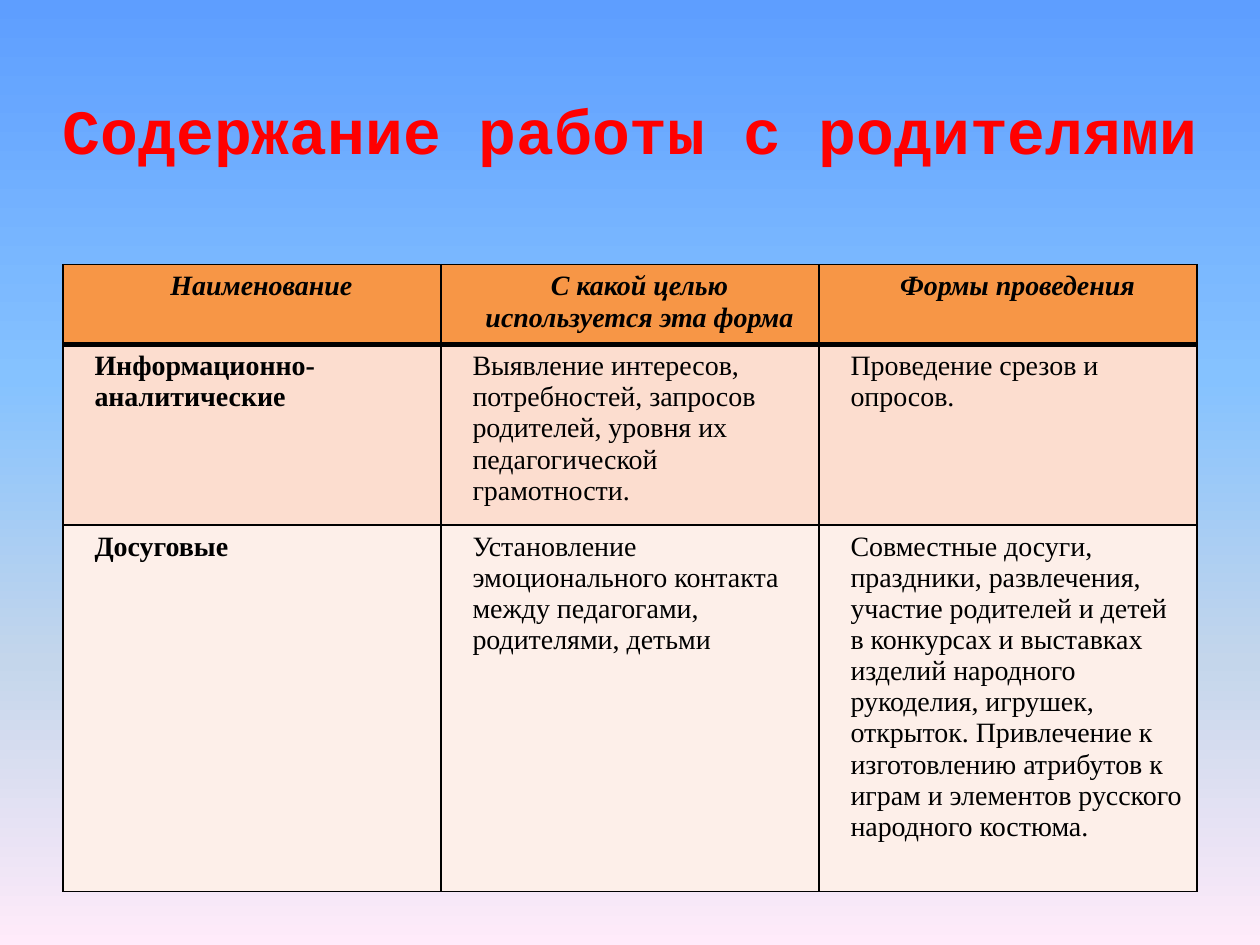
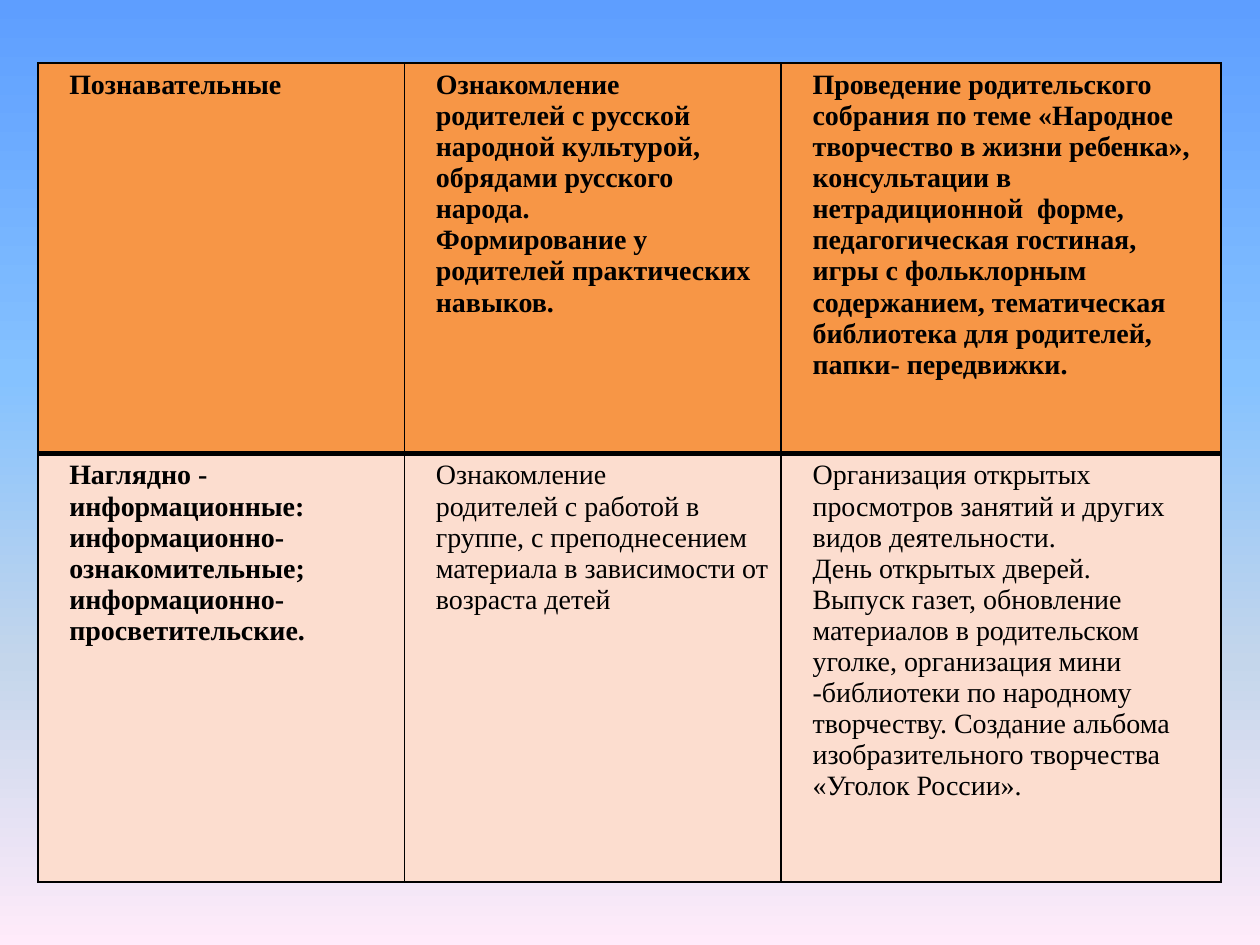
from copy import deepcopy
from dataclasses import dataclass

from lxml.etree import SubElement
from pptx import Presentation
from pptx.dml.color import RGBColor
from pptx.enum.text import PP_ALIGN
from pptx.oxml.ns import qn
from pptx.util import Inches, Pt


@dataclass(frozen=True)
class Theme:
    background: tuple = ((0, "5E9EFF"), (40, "85C2FF"), (70, "C4D6EB"), (100, "FFEBFA"))
    title_color: str = "FF0000"
    ink: str = "000000"
    row_fills: tuple = ("F79646", "FCDDCF", "FDEFE9")
    title_font: str = "Courier New"
    body_font: str = "Times New Roman"
    title_size: int = 36
    body_size: int = 16
    thin_line: int = 1
    header_line: int = 3
    cell_indent: float = 0.15


def write_text(text_frame, text, *, font, size, color, bold=False, italic=False,
               align=PP_ALIGN.LEFT, indent=0):
    text_frame.word_wrap = True
    paragraph = text_frame.paragraphs[0]
    paragraph.text = text
    paragraph.alignment = align
    if indent:
        properties = paragraph._p.get_or_add_pPr()
        properties.set("marL", str(Inches(indent)))
        properties.set("indent", "0")
    for run in paragraph.runs:
        run.font.name = font
        run.font.size = Pt(size)
        run.font.bold = bold
        run.font.italic = italic
        run.font.color.rgb = RGBColor.from_string(color)
    for line_break in paragraph._p.findall(qn("a:br")):
        line_break.insert(0, deepcopy(paragraph.runs[0]._r.rPr))


class Deck:
    def __init__(self, theme):
        self.theme = theme
        self.presentation = Presentation()
        self.presentation.slide_width = Inches(10)
        self.presentation.slide_height = Inches(7.5)
        self.slide = None

    def add_slide(self):
        self.slide = self.presentation.slides.add_slide(self.presentation.slide_layouts[6])
        fill = self.slide.background.fill
        fill.gradient()
        fill.gradient_angle = 270
        stops = next(self.slide._element.iter(qn("a:gsLst")))
        for stop in list(stops):
            stops.remove(stop)
        for position, color in self.theme.background:
            stop = SubElement(stops, qn("a:gs"), pos=str(position * 1000))
            SubElement(stop, qn("a:srgbClr"), val=color)

    def add_title(self, text, left, top, width, height):
        box = self.slide.shapes.add_textbox(Inches(left), Inches(top), Inches(width), Inches(height))
        write_text(box.text_frame, text, font=self.theme.title_font, size=self.theme.title_size,
                   color=self.theme.title_color, bold=True, align=PP_ALIGN.CENTER)

    def set_borders(self, cell, top, bottom):
        properties = cell._tc.get_or_add_tcPr()
        thin = self.theme.thin_line
        sides = (("a:lnL", thin), ("a:lnR", thin), ("a:lnT", top), ("a:lnB", bottom))
        for side, width in sides:
            line = SubElement(properties, qn(side), w=str(Pt(width)))
            fill = SubElement(line, qn("a:solidFill"))
            SubElement(fill, qn("a:srgbClr"), val=self.theme.ink)

    def add_table(self, left, top, column_widths, row_heights, rows, column_titles=False):
        theme = self.theme
        table = self.slide.shapes.add_table(
            len(rows), len(column_widths), Inches(left), Inches(top),
            Inches(sum(column_widths)), Inches(sum(row_heights))).table
        for column, width in zip(table.columns, column_widths):
            column.width = Inches(width)
        for row, height in zip(table.rows, row_heights):
            row.height = Inches(height)
        for row_index, texts in enumerate(rows):
            is_header = row_index == 0
            is_title = is_header and column_titles
            for column_index, text in enumerate(texts):
                cell = table.cell(row_index, column_index)
                self.set_borders(
                    cell,
                    top=theme.header_line if row_index == 1 else theme.thin_line,
                    bottom=theme.header_line if is_header else theme.thin_line)
                cell.fill.solid()
                cell.fill.fore_color.rgb = RGBColor.from_string(theme.row_fills[row_index])
                write_text(cell.text_frame, text, font=theme.body_font, size=theme.body_size,
                           color=theme.ink, bold=is_header or column_index == 0, italic=is_title,
                           align=PP_ALIGN.CENTER if is_title else PP_ALIGN.LEFT,
                           indent=theme.cell_indent)


def build_parent_work(deck):
    deck.add_slide()
    deck.add_title("Содержание работы с родителями", 0.14, 0.68, 9.72, 0.7)
    deck.add_table(0.5, 2.1, (3, 3, 3), (0.63, 1.43, 2.91), (
        ("Наименование", "С какой целью используется эта форма", "Формы проведения"),
        ("Информационно- аналитические",
         "Выявление интересов, потребностей, запросов родителей, уровня их "
         "педагогической грамотности.",
         "Проведение срезов и опросов."),
        ("Досуговые",
         "Установление эмоционального контакта между педагогами, родителями, детьми",
         "Совместные досуги, праздники, развлечения, участие родителей и детей в конкурсах "
         "и выставках изделий народного рукоделия, игрушек, открыток. Привлечение к "
         "изготовлению атрибутов к играм и элементов русского народного костюма."),
    ), column_titles=True)


def build_learning_forms(deck):
    deck.add_slide()
    deck.add_table(0.3, 0.5, (2.91, 2.99, 3.49), (3.1, 3.4), (
        ("Познавательные",
         "Ознакомление\nродителей с русской народной культурой, обрядами русского народа.\n"
         "Формирование у\nродителей практических\nнавыков.",
         "Проведение родительского собрания по теме «Народное творчество в жизни ребенка», "
         "консультации в нетрадиционной  форме, педагогическая гостиная, игры с фольклорным\n"
         "содержанием, тематическая\nбиблиотека для родителей, папки- передвижки."),
        ("Наглядно -\nинформационные:\nинформационно-\nознакомительные;\n"
         "информационно-\nпросветительские.",
         "Ознакомление\nродителей с работой в\nгруппе, с преподнесением\n"
         "материала в зависимости от возраста детей",
         "Организация открытых\nпросмотров занятий и других видов деятельности.\n"
         "День открытых дверей.\nВыпуск газет, обновление материалов в родительском уголке, "
         "организация мини -библиотеки по народному творчеству. Создание альбома "
         "изобразительного творчества «Уголок России»."),
    ))


def main():
    deck = Deck(Theme())
    build_parent_work(deck)
    build_learning_forms(deck)
    deck.presentation.save("out.pptx")


if __name__ == "__main__":
    main()
